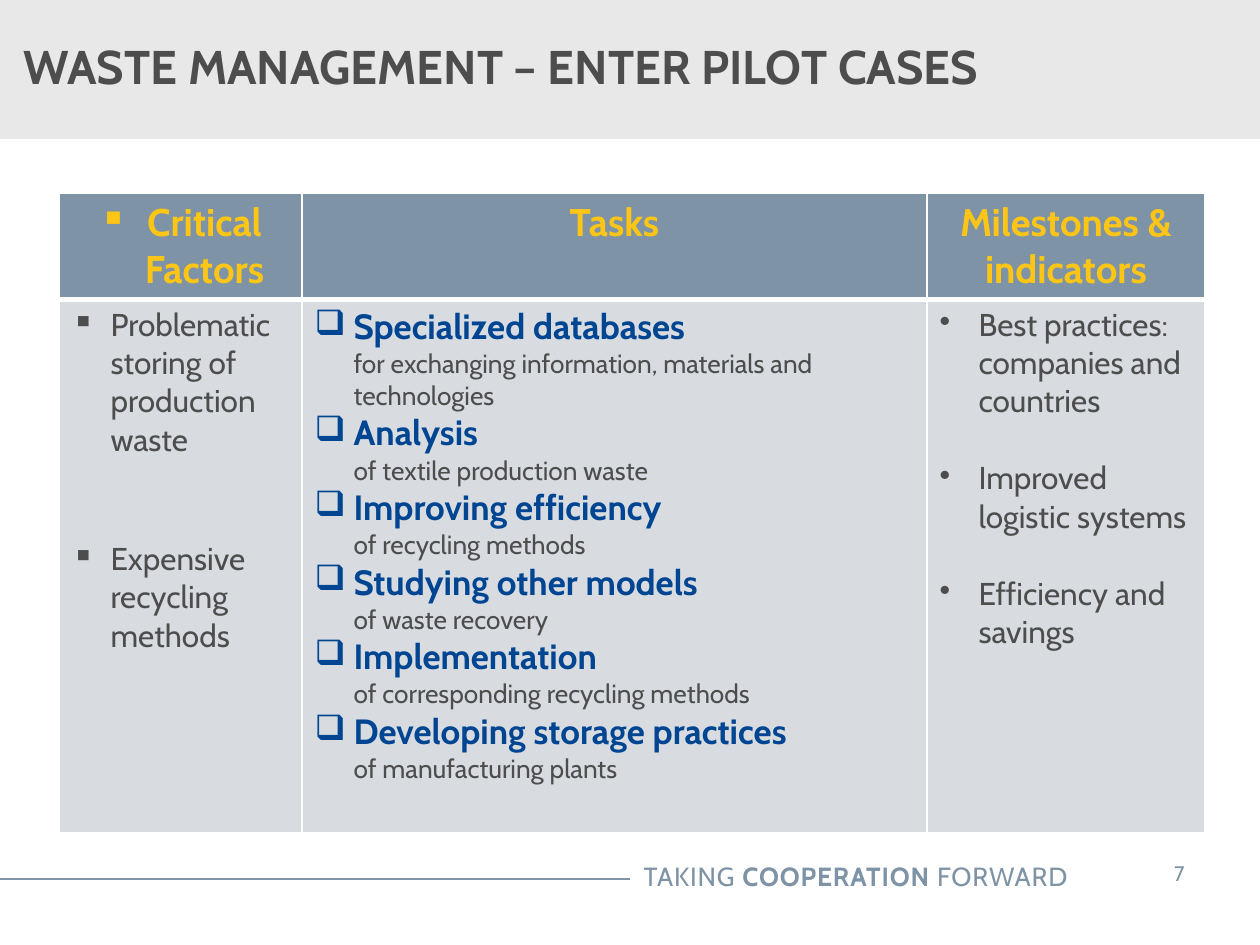
from lxml import etree
from pptx import Presentation
from pptx import util as u
from pptx.dml.color import RGBColor
from pptx.enum import shapes, text
from pptx.oxml.ns import qn

PX_PER_INCH = 126
FONT = "Cabin"
SLATE, PALE, BAND = "7E93A5", "D8DCE1", "E8E8E8"
GREY, BLUE, YELLOW, WHITE = "4D4D4E", "004591", "FDC617", "FFFFFF"
LEFT, CENTER, RIGHT = text.PP_ALIGN.LEFT, text.PP_ALIGN.CENTER, text.PP_ALIGN.RIGHT

TITLE = "WASTE MANAGEMENT – ENTER PILOT CASES"
HEADERS = [("Critical Factors", "▪"), ("Tasks", None), ("Milestones & indicators", None)]
FACTORS = ["Problematic storing of production waste", "Expensive recycling methods"]
TASKS = [
    ("Specialized databases", "for exchanging information, materials and technologies"),
    ("Analysis", "of textile production waste"),
    ("Improving efficiency", "of recycling methods"),
    ("Studying other models", "of waste recovery"),
    ("Implementation", "of corresponding recycling methods"),
    ("Developing storage practices", "of manufacturing plants"),
]
MILESTONES = [
    "Best practices: companies and countries",
    "Improved logistic systems",
    "Efficiency and savings",
]
MOTTO = [("TAKING ", False), ("COOPERATION", True), (" FORWARD", False)]
COLUMNS, ROWS = [243, 625, 278], [105, 533]


def px(n):
    return u.Emu(round(n * 914400 / PX_PER_INCH))


def color(value):
    return RGBColor.from_string(value)


def add_run(p, words, size, hue, bold=False, spacing=None):
    r = p.add_run()
    r.text = words
    r.font.name, r.font.size, r.font.bold = FONT, u.Pt(size), bold
    r.font.color.rgb = color(hue)
    if spacing:
        r.font._element.set("spc", str(round(spacing * 100)))
    return r


def paragraph(tf, index, align=LEFT, bullet=None, hang=0, before=0):
    """Return the paragraph at index, added if it is not the first."""
    p = tf.paragraphs[0] if index == 0 else tf.add_paragraph()
    p.alignment = align
    if bullet:
        pPr = p._p.get_or_add_pPr()
        pPr.set("marL", str(px(hang)))
        pPr.set("indent", str(-px(hang)))
        etree.SubElement(pPr, qn("a:buChar")).set("char", bullet)
    if index and before:
        p.space_before = u.Pt(before)
    return p


def style_cell(cell, fill, top, bottom):
    """Set white borders (widths in points), then the fill."""
    tcPr = cell._tc.get_or_add_tcPr()
    for side, width in (("L", 1), ("R", 1), ("T", top), ("B", bottom)):
        ln = etree.SubElement(tcPr, qn(f"a:ln{side}"), w=str(u.Pt(width)))
        solid = etree.SubElement(ln, qn("a:solidFill"))
        etree.SubElement(solid, qn("a:srgbClr"), val=WHITE)
    cell.fill.solid()
    cell.fill.fore_color.rgb = color(fill)


def add_title(slide):
    band = slide.shapes.add_shape(shapes.MSO_SHAPE.RECTANGLE, 0, 0, px(1260), px(139))
    band.shadow.inherit = False
    band.fill.solid()
    band.fill.fore_color.rgb = color(BAND)
    band.line.fill.background()
    slide.shapes._spTree.insert(2, band._element)  # behind the title

    title = slide.shapes.title
    title.left, title.top, title.width, title.height = px(-19), px(19), px(1018), px(94)
    tf = title.text_frame
    tf.auto_size = text.MSO_AUTO_SIZE.NONE
    tf.vertical_anchor = text.MSO_ANCHOR.MIDDLE
    p = paragraph(tf, 0)
    p._p.get_or_add_pPr().set("marL", str(px(30)))
    add_run(p, TITLE, 27, GREY, bold=True)


def add_bullets(cell, items, bullet, gap):
    for i, item in enumerate(items):
        p = paragraph(cell.text_frame, i, bullet=bullet, hang=39, before=gap)
        add_run(p, item, 18, GREY)


def add_plan(slide):
    table = slide.shapes.add_table(
        2, 3, px(59), px(193), px(sum(COLUMNS)), px(sum(ROWS))).table
    for col, width in zip(table.columns, COLUMNS):
        col.width = px(width)
    for row, height in zip(table.rows, ROWS):
        row.height = px(height)
    for i, (words, bullet) in enumerate(HEADERS):
        style_cell(table.cell(0, i), SLATE, 1, 3)
        style_cell(table.cell(1, i), PALE, 3, 1)
        p = paragraph(table.cell(0, i).text_frame, 0, CENTER, bullet, hang=48)
        add_run(p, words, 22, YELLOW, bold=True)

    add_bullets(table.cell(1, 0), FACTORS, "▪", gap=46)
    for i, (task, detail) in enumerate(TASKS):
        p = paragraph(table.cell(1, 1).text_frame, i, bullet="❑", hang=39)
        add_run(p, task, 20, BLUE, bold=True)
        p.add_line_break()
        add_run(p, detail, 15, GREY)
    add_bullets(table.cell(1, 2), MILESTONES, "•", gap=22)


def add_footer(slide):
    rule = slide.shapes.add_connector(
        shapes.MSO_CONNECTOR.STRAIGHT, px(-1), px(879), px(630), px(879))
    rule.line.color.rgb = color(SLATE)
    rule.line.width = u.Pt(0.75)
    etree.SubElement(rule._element.spPr, qn("a:effectLst"))

    motto = slide.shapes.add_textbox(px(489), px(854), px(591), px(44)).text_frame
    motto.word_wrap = True
    p = paragraph(motto, 0, RIGHT)
    for words, bold in MOTTO:
        add_run(p, words, 15, SLATE, bold, spacing=0.5)

    number = slide.shapes.add_textbox(px(1133), px(848), px(93), px(50)).text_frame
    number.word_wrap = False
    number.margin_left = number.margin_right = px(25)
    number.margin_top = number.margin_bottom = px(13)
    add_run(paragraph(number, 0, CENTER), "7", 12, SLATE)


def main():
    prs = Presentation()
    prs.slide_width, prs.slide_height = px(1260), px(945)
    slide = prs.slides.add_slide(prs.slide_layouts[5])
    add_title(slide)
    add_plan(slide)
    add_footer(slide)
    prs.save("out.pptx")


if __name__ == "__main__":
    main()
